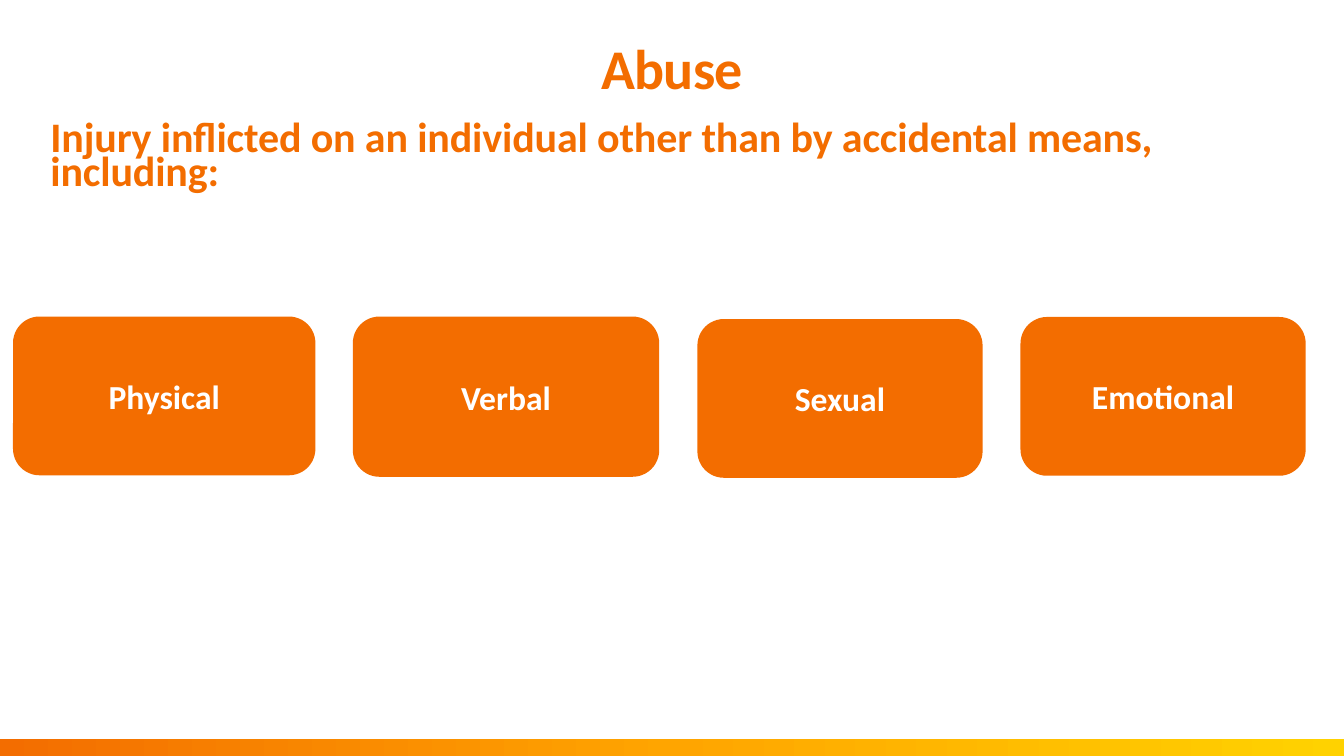
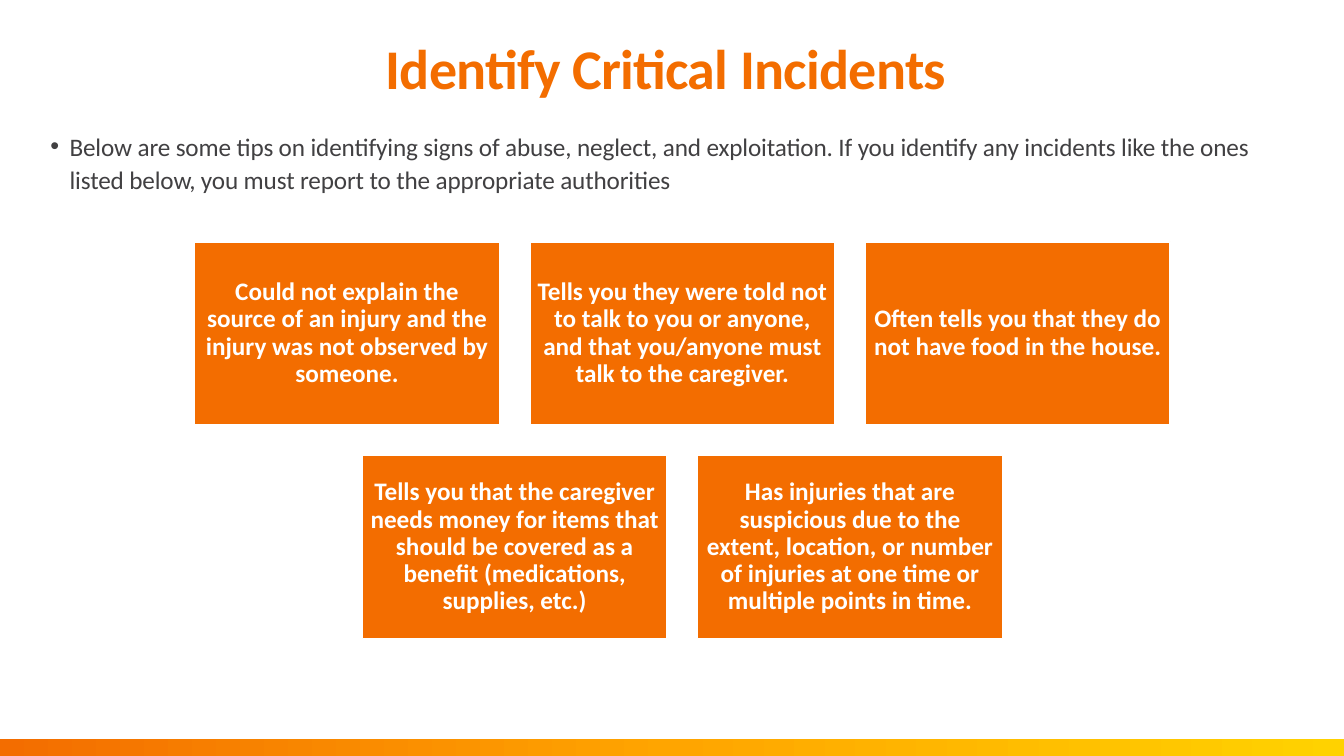
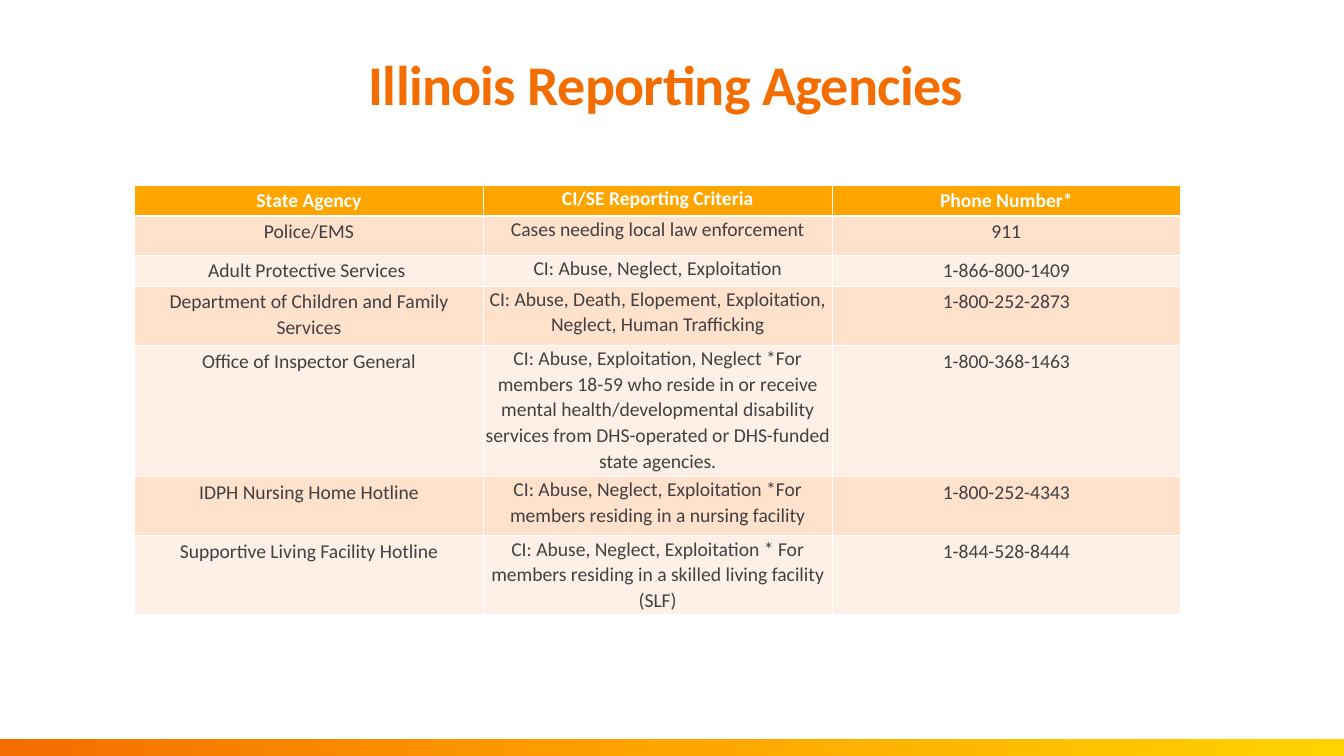
from copy import deepcopy

from pptx import Presentation
from pptx.dml.color import RGBColor
from pptx.enum.shapes import MSO_SHAPE
from pptx.enum.text import MSO_ANCHOR, MSO_AUTO_SIZE, PP_ALIGN
from pptx.oxml.ns import qn
from pptx.util import Inches, Pt
from lxml.etree import SubElement

WIDE, TALL = Inches(26.67), Inches(15)
ORANGE = RGBColor(0xF3, 0x6D, 0x00)
AMBER = RGBColor(0xFF, 0xA5, 0x00)
YELLOW = RGBColor(0xFF, 0xD2, 0x00)
PEACH = RGBColor(0xFF, 0xE1, 0xCC)
CREAM = RGBColor(0xFF, 0xF0, 0xE7)
WHITE = RGBColor(0xFF, 0xFF, 0xFF)
GREY = RGBColor(0x41, 0x40, 0x42)

SIDES = ("margin_left", "margin_top", "margin_right", "margin_bottom")
BARE = dict.fromkeys(SIDES, 0)
SNUG = dict.fromkeys(SIDES, Inches(0.15))
FIXED = {"word_wrap": True, "auto_size": MSO_AUTO_SIZE.NONE}
MID = {"vertical_anchor": MSO_ANCHOR.MIDDLE}
TOP = {"vertical_anchor": MSO_ANCHOR.TOP}
CENTRE = {"alignment": PP_ALIGN.CENTER}
HEAD = CENTRE | {"line_spacing": Pt(80), "space_before": Pt(0)}
LEAD = {"alignment": PP_ALIGN.LEFT, "line_spacing": Pt(48),
        "space_before": Pt(0), "space_after": Pt(15.8)}
TILE = CENTRE | {"line_spacing": 0.9}
CELL = CENTRE | {"line_spacing": 1.07}

CARDS = [
    ("Physical", 0.97, 41.87, 22.5, 21),
    ("Verbal", 26.25, 41.87, 22.8, 21.2),
    ("Sexual", 51.89, 42.2, 21.22, 21),
    ("Emotional", 75.93, 41.93, 21.22, 21),
]
SIGNS = [
    ["Could not explain the source of an injury and the injury was not observed by someone.",
     "Tells you they were told not to talk to you or anyone, and that you/anyone must talk to the caregiver.",
     "Often tells you that they do not have food in the house."],
    ["Tells you that the caregiver needs money for items that should be covered as a benefit (medications, supplies, etc.)",
     "Has injuries that are suspicious due to the extent, location, or number of injuries at one time or multiple points in time."],
]
ROWS = [
    (4.07, "State Agency", "CI/SE Reporting Criteria", "Phone Number*"),
    (5.2, "Police/EMS", "Cases needing local law enforcement", "911"),
    (4.07, "Adult Protective Services ", "CI: Abuse, Neglect, Exploitation", "1-866-800-1409"),
    (7.87, "Department of Children and Family Services",
     "CI: Abuse, Death, Elopement, Exploitation, Neglect, Human Trafficking", "1-800-252-2873"),
    (17.33, "Office of Inspector General",
     "CI: Abuse, Exploitation, Neglect *For members 18-59 who reside in or receive mental "
     "health/developmental disability services from DHS-operated or DHS-funded state agencies.",
     "1-800-368-1463"),
    (7.87, "IDPH Nursing Home Hotline",
     "CI: Abuse, Neglect, Exploitation *For members residing in a nursing facility", "1-800-252-4343"),
    (10.33, "Supportive Living Facility Hotline",
     "CI: Abuse, Neglect, Exploitation * For members residing in a skilled living facility (SLF)",
     "1-844-528-8444"),
]


def span(left, top, wide, high):
    """Turn percent shares of the slide into lengths."""
    return [round(share * full / 100) for share, full in
            ((left, WIDE), (top, TALL), (wide, WIDE), (high, TALL))]


def apply(thing, looks):
    """Set each format value on an object."""
    for name, value in looks.items():
        setattr(thing, name, value)


def write(frame, text, size, color, form, bold=True, track=0):
    """Fill a text frame with one formatted paragraph and return it."""
    para = frame.paragraphs[0]
    apply(para, form)
    run = para.add_run()
    run.text = text
    apply(run.font, {"name": "Calibri", "size": Pt(size), "bold": bold})
    run.font.color.rgb = color
    if track:
        run.font._element.set("spc", str(track))
    return para


def place(holder, area, looks):
    """Move a placeholder and fix its text frame."""
    apply(holder, dict(zip(("left", "top", "width", "height"), span(*area))))
    apply(holder.text_frame, BARE | FIXED | looks)
    return holder.text_frame


def start(deck, layout, title, top=2.53):
    """Add a slide with its title."""
    slide = deck.slides.add_slide(deck.slide_layouts[layout])
    frame = place(slide.shapes.title, (3.75, top, 92.5, 14.13), MID)
    write(frame, title, 80, ORANGE, HEAD, track=-100)
    return slide


def intro(slide, text, size, color, bold, dot=False):
    """Fill the body placeholder, with or without a bullet."""
    frame = place(slide.placeholders[1], (3.75, 16.87, 92.5, 66), TOP)
    para = write(frame, text, size, color, LEAD, bold, -20)
    props = para._p.get_or_add_pPr()
    indent = Inches(0.38) if dot else 0
    props.set("marL", str(indent))
    props.set("indent", str(-indent))
    if dot:
        SubElement(props, qn("a:buChar"), char="•")
    else:
        SubElement(props, qn("a:buNone"))


def block(slide, kind, area):
    """Add an orange shape with no line or shadow."""
    shape = slide.shapes.add_shape(kind, *span(*area))
    shape.shadow.inherit = False
    shape.fill.solid()
    shape.fill.fore_color.rgb = ORANGE
    shape.line.fill.background()
    return shape


def label(shape, text, size, form, looks):
    """Write centred white text in a shape."""
    apply(shape.text_frame, FIXED | MID | looks)
    write(shape.text_frame, text, size, WHITE, form)


def band(deck, slide):
    """Put the gradient footer band on the master."""
    strip = block(slide, MSO_SHAPE.RECTANGLE, (0, 97.8, 100, 2.4))
    strip.fill.gradient()
    strip.fill.gradient_angle = 0
    stops = strip.element.find(".//" + qn("a:gsLst"))
    stops.append(deepcopy(stops[0]))
    for stop, color, spot in zip(strip.fill.gradient_stops, (ORANGE, AMBER, YELLOW), (0, 0.5, 1)):
        stop.color.rgb = color
        stop.position = spot
    deck.slide_master.shapes.element.append(strip.element)


def tiles(slide, rows):
    """Lay out rows of tiles, each row centred on one axis."""
    wide, high, step, drop, axis = 22.68, 24.2, 24.95, 28.27, 50.77
    for line, texts in enumerate(rows):
        left = axis - ((len(texts) - 1) * step + wide) / 2
        for spot, text in enumerate(texts):
            tile = block(slide, MSO_SHAPE.RECTANGLE, (left + spot * step, 32 + line * drop, wide, high))
            tile.line.color.rgb = WHITE
            tile.line.width = Pt(2)
            label(tile, text, 36, TILE, SNUG)


def edge(cell, base):
    """Draw white borders round a cell."""
    props = cell._tc.get_or_add_tcPr()
    for side, width in (("L", 1), ("R", 1), ("T", 1), ("B", base)):
        line = SubElement(props, qn("a:ln" + side), w=str(Pt(width)))
        SubElement(SubElement(line, qn("a:solidFill")), qn("a:srgbClr"), val=str(WHITE))


def chart(slide, rows):
    """Build the table of agencies."""
    area = span(10.01, 24.47, 77.84, sum(row[0] for row in rows))
    table = slide.shapes.add_table(len(rows), 3, *area).table
    for line, (high, *texts) in enumerate(rows):
        table.rows[line].height = round(high * TALL / 100)
        head = line == 0
        for col, text in enumerate(texts):
            cell = table.cell(line, col)
            edge(cell, 3 if head else 1)
            cell.fill.solid()
            cell.fill.fore_color.rgb = AMBER if head else (CREAM, PEACH)[line % 2]
            if col == 1:
                apply(cell, BARE)
            write(cell.text_frame, text, 28, WHITE if head else GREY, CELL, head)


def main():
    """Build the three slides."""
    deck = Presentation()
    apply(deck, {"slide_width": WIDE, "slide_height": TALL})

    abuse = start(deck, 1, "Abuse")
    band(deck, abuse)
    intro(abuse, "Injury inflicted on an individual other than by accidental means, including:",
          60, ORANGE, True)
    for text, *area in CARDS:
        label(block(abuse, MSO_SHAPE.ROUNDED_RECTANGLE, area), text, 48, CENTRE, {})

    signs = start(deck, 1, "Identify Critical Incidents ")
    intro(signs, "Below are some tips on identifying signs of abuse, neglect, and exploitation. "
          "If you identify any incidents like the ones listed below, you must report to the "
          "appropriate authorities", 36, GREY, False, True)
    tiles(signs, SIGNS)

    chart(start(deck, 5, "Illinois Reporting Agencies ", 4.73), ROWS)
    deck.save("out.pptx")


if __name__ == "__main__":
    main()
